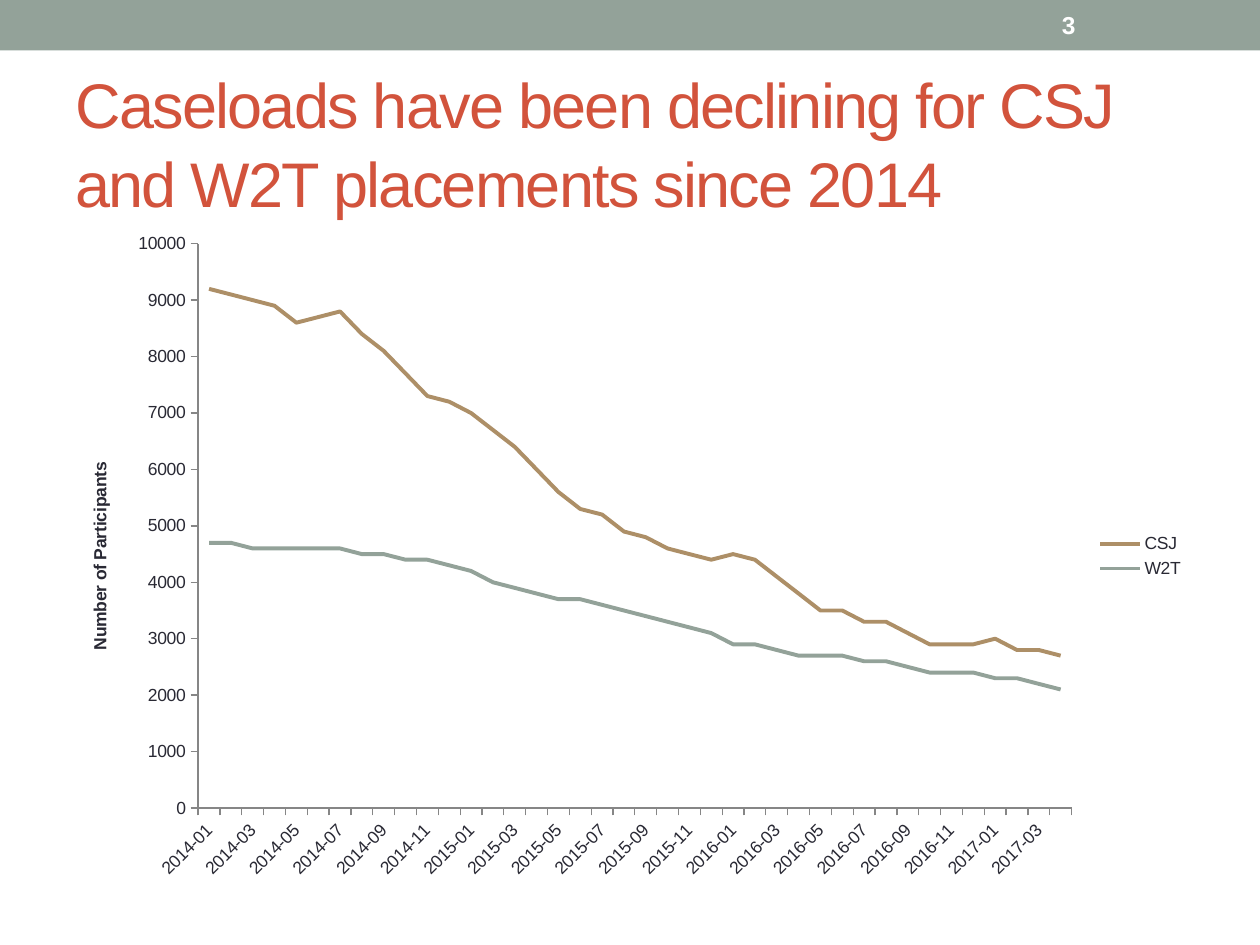
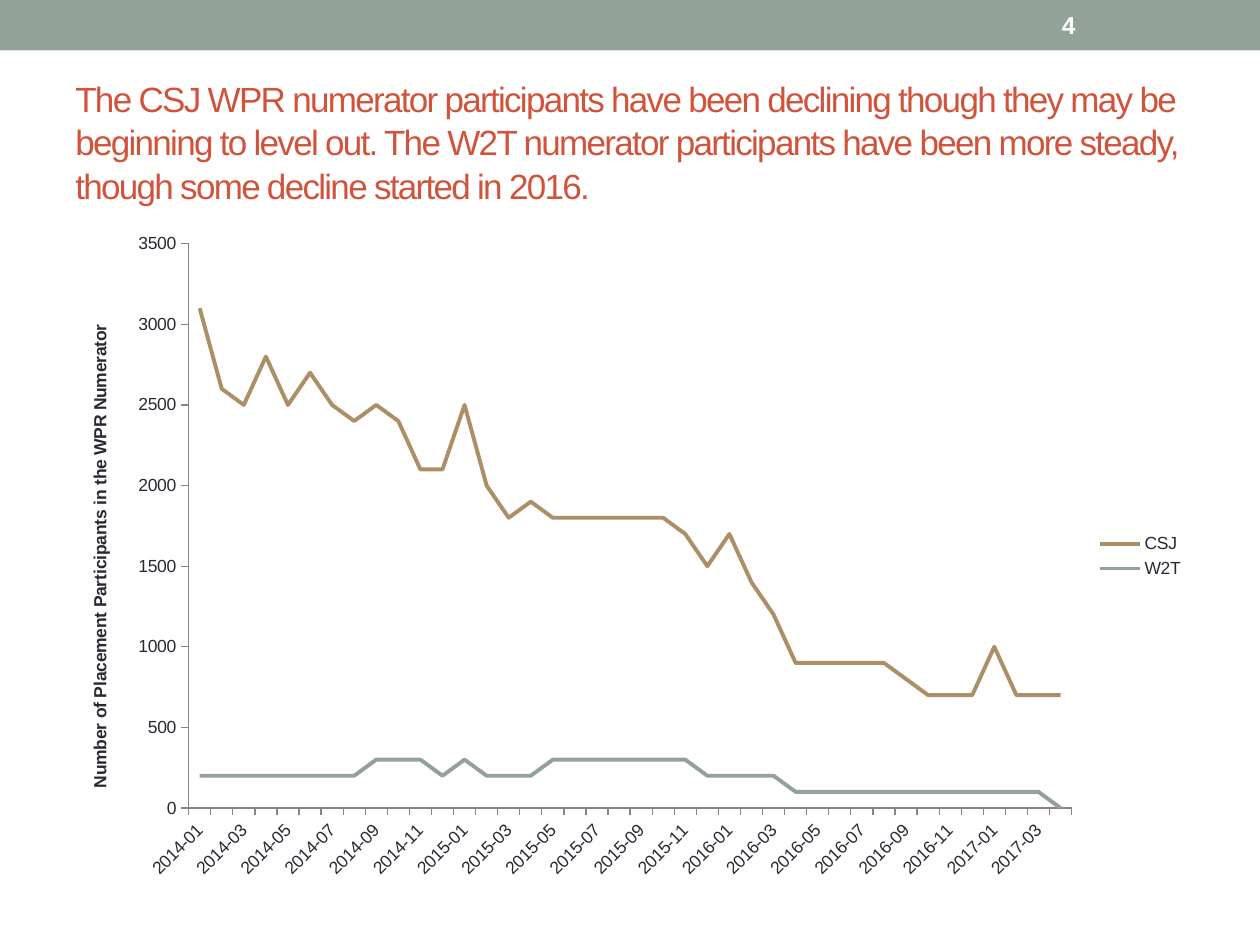
from dataclasses import dataclass

from pptx import Presentation
from pptx.chart import data as chart_data
from pptx.dml import color
from pptx.enum import chart as chart_enum, shapes, text
from pptx.util import Inches, Pt


@dataclass(frozen=True)
class Theme:
    font: str = "Arial"
    band: str = "93A299"
    title: str = "D2533C"
    ink: str = "292934"
    axis: str = "868686"
    white: str = "FFFFFF"
    lines: tuple = ("AD8F67", "93A299")
    number_size: int = 14
    chart_size: int = 10
    line_width: float = 2.25
    axis_width: float = 0.75


THEME = Theme()
BAND_BOX = (0, 0, 10, 0.4)
TITLE_BOX = (0.5, 0.58, 9, 1.08)
CHART_BOX = (0.5, 1.75, 9, 5.33)
MONTHS = [f"{2014 + i // 12}-{i % 12 + 1:02d}" for i in range(40)]

SLIDES = [
    dict(
        number=3,
        title="Caseloads have been declining for CSJ and W2T placements since 2014",
        title_size=36,
        axis_title="Number of Participants",
        top=10000,
        step=1000,
        series={
            "CSJ": [9200, 9100, 9000, 8900, 8600, 8700, 8800, 8400, 8100, 7700,
                    7300, 7200, 7000, 6700, 6400, 6000, 5600, 5300, 5200, 4900,
                    4800, 4600, 4500, 4400, 4500, 4400, 4100, 3800, 3500, 3500,
                    3300, 3300, 3100, 2900, 2900, 2900, 3000, 2800, 2800, 2700],
            "W2T": [4700, 4700, 4600, 4600, 4600, 4600, 4600, 4500, 4500, 4400,
                    4400, 4300, 4200, 4000, 3900, 3800, 3700, 3700, 3600, 3500,
                    3400, 3300, 3200, 3100, 2900, 2900, 2800, 2700, 2700, 2700,
                    2600, 2600, 2500, 2400, 2400, 2400, 2300, 2300, 2200, 2100],
        },
    ),
    dict(
        number=4,
        title="The CSJ WPR numerator participants have been declining though they "
              "may be beginning to level out. The W2T numerator participants have "
              "been more steady, though some decline started in 2016.",
        title_size=20,
        axis_title="Number of Placement Participants in the WPR Numerator",
        top=3500,
        step=500,
        series={
            "CSJ": [3100, 2600, 2500, 2800, 2500, 2700, 2500, 2400, 2500, 2400,
                    2100, 2100, 2500, 2000, 1800, 1900, 1800, 1800, 1800, 1800,
                    1800, 1800, 1700, 1500, 1700, 1400, 1200, 900, 900, 900,
                    900, 900, 800, 700, 700, 700, 1000, 700, 700, 700],
            "W2T": [200, 200, 200, 200, 200, 200, 200, 200, 300, 300,
                    300, 200, 300, 200, 200, 200, 300, 300, 300, 300,
                    300, 300, 300, 200, 200, 200, 200, 100, 100, 100,
                    100, 100, 100, 100, 100, 100, 100, 100, 100, 0],
        },
    ),
]


def rgb(value):
    return color.RGBColor.from_string(value)


def set_font(font, size, ink, bold=False):
    font.name = THEME.font
    font.size = Pt(size)
    font.bold = bold
    font.color.rgb = rgb(ink)


def add_text(s, box, content, *, size, ink, bold=False, tracking=0, spacing=1.0):
    sp = s.shapes.add_textbox(*map(Inches, box))
    tf = sp.text_frame
    tf.word_wrap = True
    tf.vertical_anchor = text.MSO_ANCHOR.MIDDLE
    p = tf.paragraphs[0]
    p.line_spacing = spacing
    r = p.add_run()
    r.text = content
    set_font(r.font, size, ink, bold)
    if tracking:
        r.font._element.set("spc", str(tracking * 100))
    return sp


def add_band(s, box, number):
    left, top, width, height = box
    sp = s.shapes.add_shape(shapes.MSO_SHAPE.RECTANGLE, *map(Inches, box))
    sp.shadow.inherit = False
    sp.fill.solid()
    sp.fill.fore_color.rgb = rgb(THEME.band)
    sp.line.fill.background()
    number_box = (left + width - 1.67, top + 0.02, 1.17, height - 0.04)
    add_text(s, number_box, str(number), size=THEME.number_size,
             ink=THEME.white, bold=True)


def style_axis(axis):
    axis.has_major_gridlines = False
    axis.major_tick_mark = chart_enum.XL_TICK_MARK.OUTSIDE
    axis.minor_tick_mark = chart_enum.XL_TICK_MARK.NONE
    axis.format.line.color.rgb = rgb(THEME.axis)
    axis.format.line.width = Pt(THEME.axis_width)
    set_font(axis.tick_labels.font, THEME.chart_size, THEME.ink)


def add_line_chart(s, box, series, axis_title, top, step):
    data = chart_data.CategoryChartData()
    data.categories = MONTHS
    for name, values in series.items():
        data.add_series(name, values)
    chart = s.shapes.add_chart(chart_enum.XL_CHART_TYPE.LINE,
                               *map(Inches, box), data).chart
    chart.has_title = False
    set_font(chart.font, THEME.chart_size, THEME.ink)
    chart.has_legend = True
    chart.legend.position = chart_enum.XL_LEGEND_POSITION.RIGHT
    chart.legend.include_in_layout = False
    chart.plots[0].vary_by_categories = False

    for line, ink in zip(chart.plots[0].series, THEME.lines):
        line.smooth = False
        line.marker.style = chart_enum.XL_MARKER_STYLE.NONE
        line.format.line.color.rgb = rgb(ink)
        line.format.line.width = Pt(THEME.line_width)

    months, counts = chart.category_axis, chart.value_axis
    for axis in (months, counts):
        style_axis(axis)
    months._element.txPr.bodyPr.set("rot", str(-45 * 60000))
    counts.minimum_scale = 0
    counts.maximum_scale = top
    counts.major_unit = step
    p = counts.axis_title.text_frame.paragraphs[0]
    r = p.add_run()
    r.text = axis_title
    set_font(r.font, THEME.chart_size, THEME.ink, bold=True)


def add_chart_slide(prs, number, title, title_size, **chart):
    s = prs.slides.add_slide(prs.slide_layouts[6])
    add_band(s, BAND_BOX, number)
    add_text(s, TITLE_BOX, title, size=title_size, ink=THEME.title,
             tracking=-1, spacing=1.04)
    add_line_chart(s, CHART_BOX, **chart)


def main():
    prs = Presentation()
    prs.slide_width = Inches(10)
    prs.slide_height = Inches(7.5)
    for slide in SLIDES:
        add_chart_slide(prs, **slide)
    prs.save("out.pptx")


if __name__ == "__main__":
    main()
